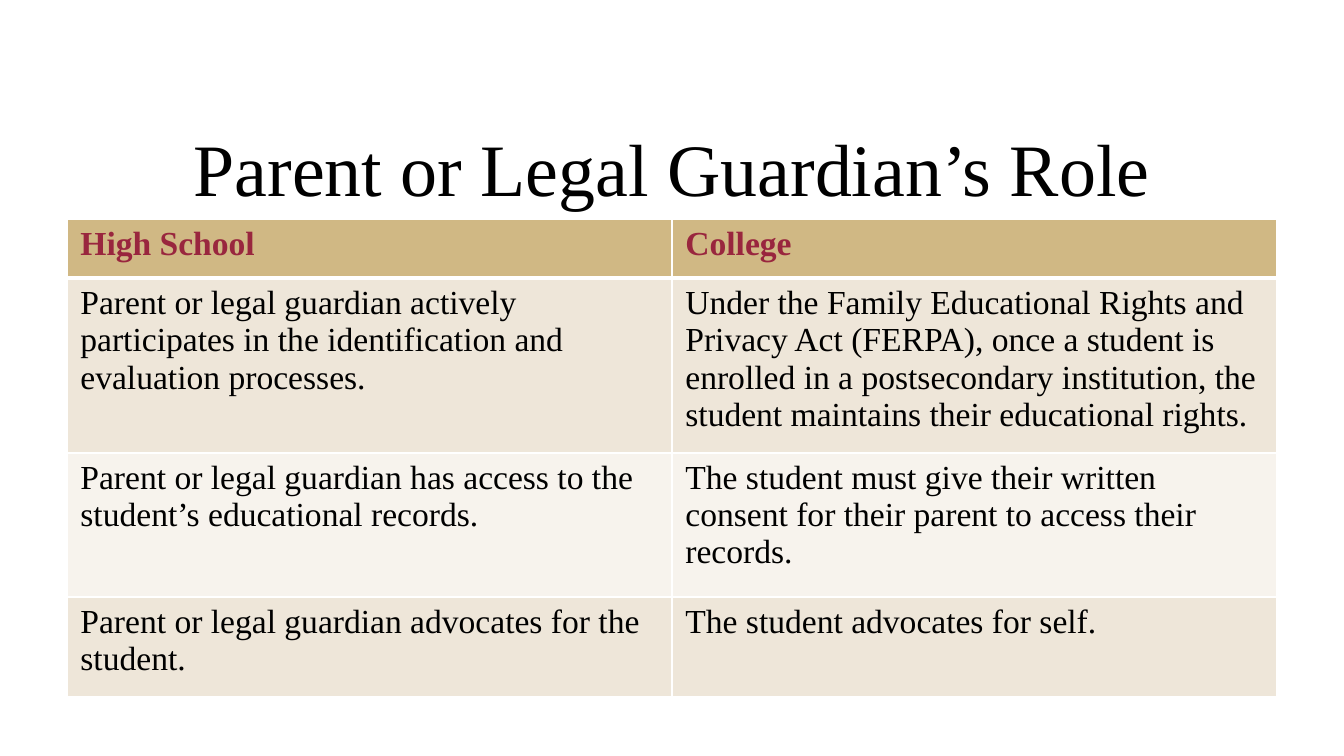
from lxml import etree
from pptx import Presentation
from pptx import util as u
from pptx.dml.color import RGBColor
from pptx.enum import text
from pptx.oxml.ns import qn

PX = 9144000 / 1344  # EMU in one px
THEME = dict(
    font="Times New Roman", title=39.6, body=18,
    ink="000000", wine="99263E", gold="D0B884",
    bands=("EEE6D9", "F7F3ED"), rule="FFFFFF",
)
LEFT, WIDTH = 67, 1210


def px(n):
    return u.Emu(round(n * PX))


def write(frame, words, size=THEME["body"], color=THEME["ink"], bold=False,
          align=text.PP_ALIGN.LEFT, anchor=text.MSO_ANCHOR.TOP):
    frame.word_wrap = True
    frame.vertical_anchor = anchor
    para = frame.paragraphs[0]
    para.alignment = align
    run = para.add_run()
    run.text = words
    run.font.name = THEME["font"]
    run.font.size = u.Pt(size)
    run.font.bold = bold
    run.font.color.rgb = RGBColor.from_string(color)


deck = Presentation()
deck.slide_width, deck.slide_height = px(1344), px(756)
slide = deck.slides.add_slide(deck.slide_layouts[6])

title = slide.shapes.add_textbox(px(LEFT), px(113), px(WIDTH), px(107))
write(title.text_frame, "Parent or Legal Guardian’s Role", size=THEME["title"],
      align=text.PP_ALIGN.CENTER, anchor=text.MSO_ANCHOR.MIDDLE)

rows = [
    (59, "High School", "College"),
    (162, "Parent or legal guardian actively participates in the identification "
          "and evaluation processes.",
          "Under the Family Educational Rights and Privacy Act (FERPA), once a "
          "student is enrolled in a postsecondary institution, the student "
          "maintains their educational rights."),
    (144, "Parent or legal guardian has access to the student’s educational records.",
          "The student must give their written consent for their parent to "
          "access their records."),
    (100, "Parent or legal guardian advocates for the student.",
          "The student advocates for self."),
]
high = sum(row[0] for row in rows)
table = slide.shapes.add_table(
    len(rows), 2, px(LEFT), px(219), px(WIDTH), px(high)).table
for col in table.columns:
    col.width = px(WIDTH // 2)

for r, (tall, *words) in enumerate(rows):
    table.rows[r].height = px(tall)
    head = r == 0
    for c, word in enumerate(words):
        cell = table.cell(r, c)
        write(cell.text_frame, word, bold=head,
              color=THEME["wine"] if head else THEME["ink"])
        props = cell._tc.get_or_add_tcPr()
        for side in "LRTB":
            thick = (r, side) in ((0, "B"), (1, "T"))
            line = etree.SubElement(props, qn(f"a:ln{side}"),
                                    w=str(u.Pt(3 if thick else 1)))
            fill = etree.SubElement(line, qn("a:solidFill"))
            etree.SubElement(fill, qn("a:srgbClr"), val=THEME["rule"])
        cell.fill.solid()
        shade = THEME["gold"] if head else THEME["bands"][(r - 1) % 2]
        cell.fill.fore_color.rgb = RGBColor.from_string(shade)

deck.save("out.pptx")
